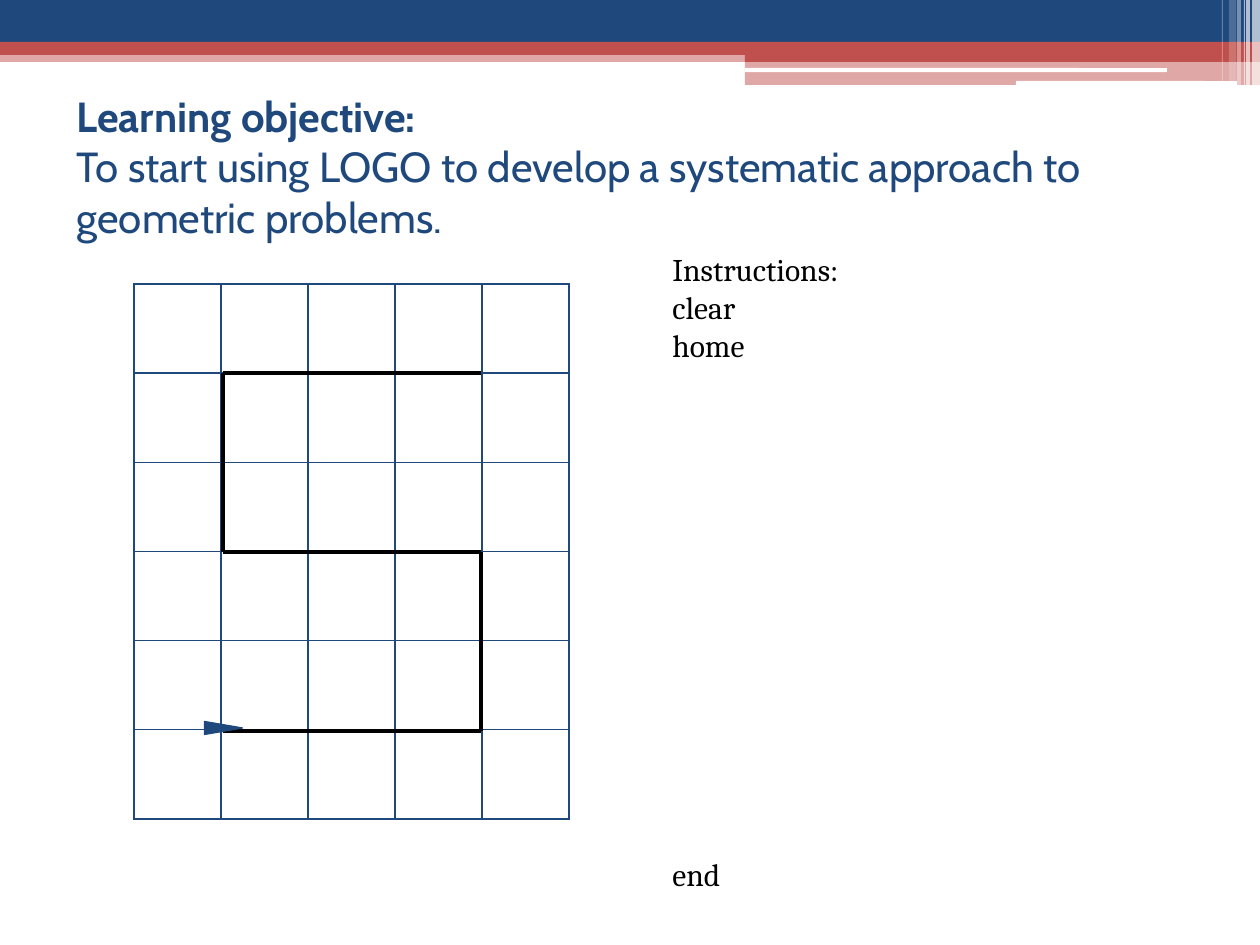
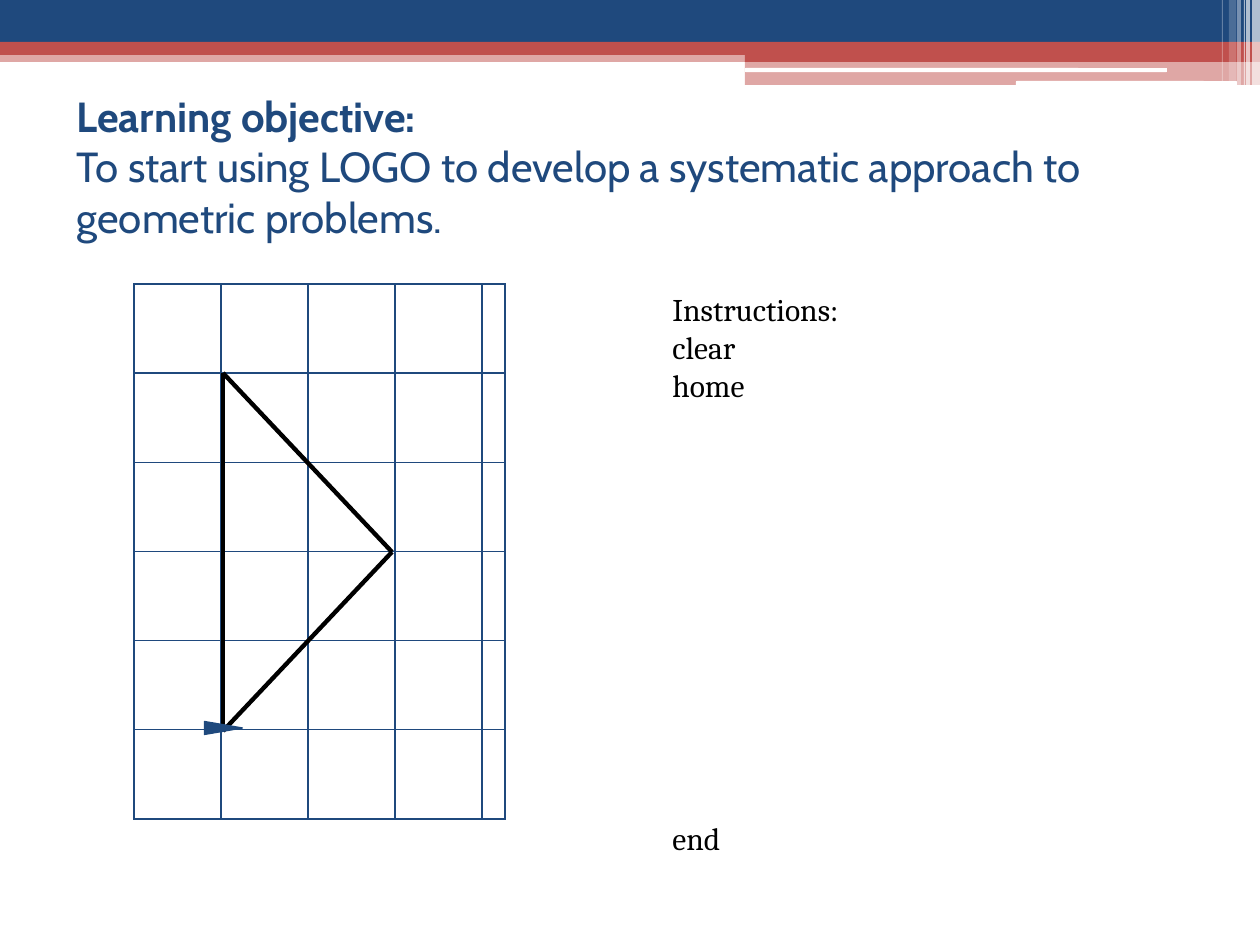
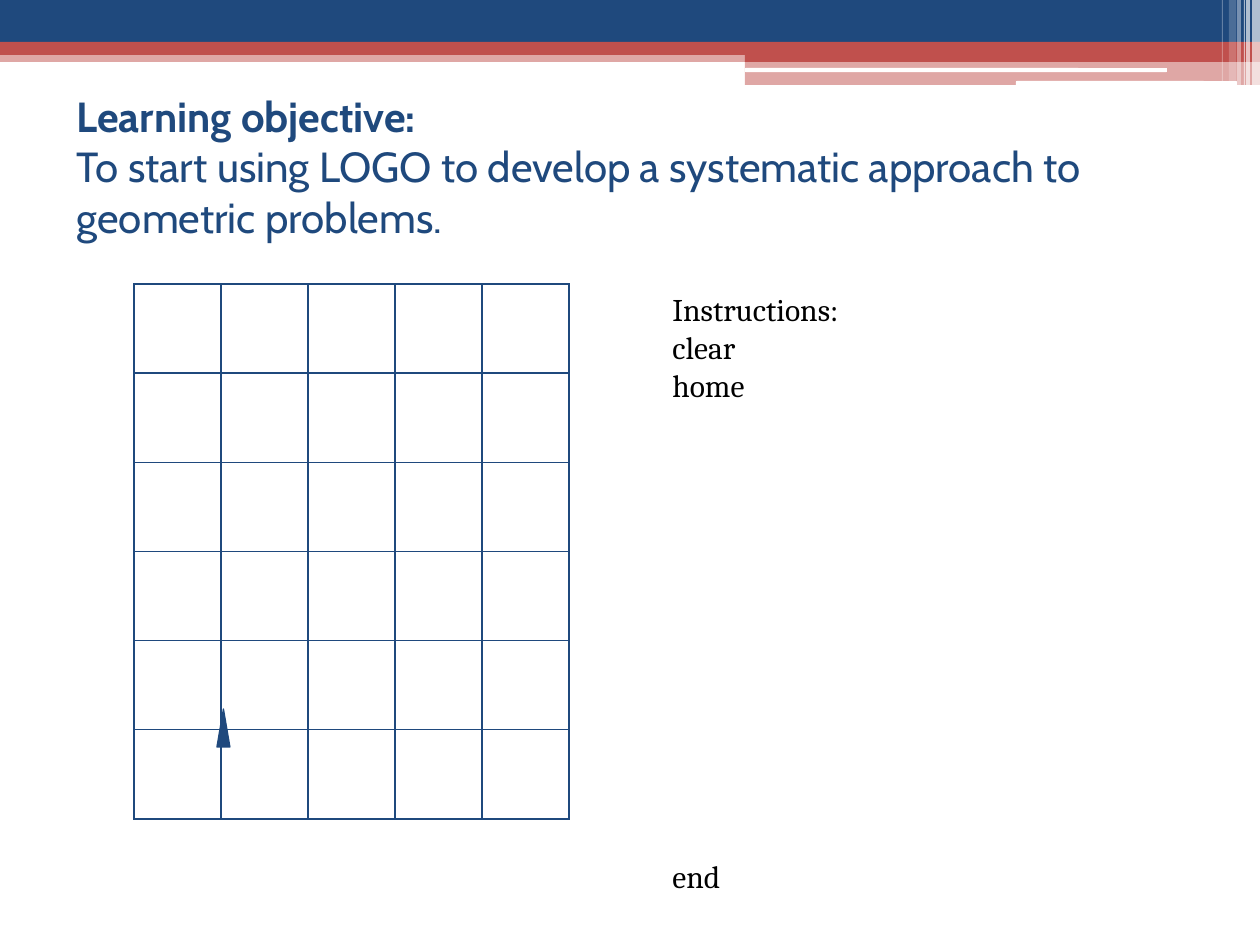
from lxml import etree
from pptx import Presentation
from pptx import util as u
from pptx.dml.color import RGBColor
from pptx.enum import shapes, text
from pptx.oxml.ns import qn

EMU_PER_PX = 914400 / 126
NAVY, RED, WHITE, BLACK = "1F497D", "C0504D", "FFFFFF", "000000"
TITLE_FONT, BODY_FONT = "Cabin", "Cambria"
TITLE_SIZE, BODY_SIZE = 24, 18
RECT = shapes.MSO_SHAPE.RECTANGLE
ROUNDED = shapes.MSO_SHAPE.ROUNDED_RECTANGLE

# kind, left, top, width, height, colour, opacity in percent
BANDS = [
    (RECT, 0, 50, 1260, 12, RED, 50),
    (RECT, 0, 0, 1260, 42, NAVY, 100),
    (RECT, 0, 42, 1260, 13, RED, 100),
    (RECT, 745, 49, 515, 13, RED, 100),
    (RECT, 745, 61, 515, 24, RED, 50),
    (ROUNDED, 745, 68, 422, 4, WHITE, 100),
    (ROUNDED, 1016, 81, 221, 5, WHITE, 100),
    (RECT, 1252, 0, 8, 85, WHITE, 65),
    (RECT, 1246, 0, 4, 85, WHITE, 65),
    (RECT, 1244, 0, 1, 85, WHITE, 60),
    (RECT, 1237, 0, 4, 85, WHITE, 40),
    (RECT, 1229, 0, 7, 81, WHITE, 20),
    (RECT, 1222, 0, 1, 81, WHITE, 30),
]

# Corners of the figures drawn on the grid
LEFT, TIP, RIGHT = 223, 392, 481
TOP, MIDDLE, BOTTOM = 373, 552, 731
S_STROKES = [
    (RIGHT, TOP, LEFT, TOP),
    (RIGHT, BOTTOM, LEFT, BOTTOM),
    (RIGHT, MIDDLE, LEFT, MIDDLE),
    (LEFT, MIDDLE, LEFT, TOP),
    (RIGHT, BOTTOM, RIGHT, MIDDLE),
]
TRIANGLE_STROKES = [
    (TIP, MIDDLE, LEFT, TOP),
    (TIP, MIDDLE, LEFT, BOTTOM),
    (LEFT, 728, LEFT, TOP),
]


def px(*lengths):
    return [u.Emu(round(length * EMU_PER_PX)) for length in lengths]


def colour(value):
    return RGBColor.from_string(value)


def style_span(span, font, size, value, bold=False):
    span.font.name = font
    span.font.size = u.Pt(size)
    span.font.color.rgb = colour(value)
    span.font.bold = bold


def add_filled(page, kind, left, top, width, height, fill, opacity=100):
    shape = page.shapes.add_shape(kind, *px(left, top, width, height))
    shape.shadow.inherit = False
    shape.fill.solid()
    shape.fill.fore_color.rgb = colour(fill)
    shape.line.fill.background()
    if opacity < 100:
        tint = next(shape.element.iter(qn("a:srgbClr")))
        etree.SubElement(tint, qn("a:alpha"), val=str(opacity * 1000))
    return shape


def add_bands(layout, page):
    """Draw the bands on the page, then move them to the layout all pages share."""
    for placeholder in list(layout.placeholders):
        if placeholder.placeholder_format.type != shapes.PP_PLACEHOLDER.TITLE:
            layout.shapes.element.remove(placeholder.element)
    for band in BANDS:
        layout.shapes.element.append(add_filled(page, *band).element)


def add_title(page, heading, objective):
    title = page.shapes.title
    title.left, title.top, title.width, title.height = px(64, 98, 1124, 136)
    frame = title.text_frame
    frame.text = f"{heading}\v{objective}"
    frame.auto_size = text.MSO_AUTO_SIZE.NONE
    frame.vertical_anchor = text.MSO_ANCHOR.MIDDLE
    para = frame.paragraphs[0]
    para.alignment = text.PP_ALIGN.LEFT
    for span in para.runs:
        style_span(span, TITLE_FONT, TITLE_SIZE, NAVY, span.text == heading)
    for line_break in title.element.iter(qn("a:br")):
        etree.SubElement(line_break, qn("a:rPr"), sz=str(TITLE_SIZE * 100))


def add_grid(page, last_column=87):
    widths = [87] * 4 + [last_column]
    frame = page.shapes.add_table(6, 5, *px(134, 284, sum(widths), 535))
    table = frame.table
    table.first_row = table.horz_banding = False
    for column, width in zip(table.columns, widths):
        column.width = px(width)[0]
    for cell in table.iter_cells():
        cell.margin_left = cell.margin_right = 0
        cell.fill.background()
    for properties in frame.element.iter(qn("a:tcPr")):
        for index, side in enumerate(("a:lnL", "a:lnR", "a:lnT", "a:lnB")):
            border = etree.Element(qn(side), w=str(u.Pt(1)))
            fill = etree.SubElement(border, qn("a:solidFill"))
            etree.SubElement(fill, qn("a:srgbClr"), val=NAVY)
            properties.insert(index, border)


def add_strokes(page, strokes):
    for stroke in strokes:
        line = page.shapes.add_connector(shapes.MSO_CONNECTOR.STRAIGHT, *px(*stroke))
        line.line.color.rgb = colour(BLACK)
        line.line.width = u.Pt(2.5)
        etree.SubElement(line.element.spPr, qn("a:effectLst"))


def add_instructions(page, top, height, gap):
    """List the commands, leaving a gap before the last for pupils to fill in."""
    box = page.shapes.add_textbox(*px(660, top, 476, height))
    frame = box.text_frame
    frame.word_wrap = True
    frame.text = "Instructions:\nclear\nhome\nend"
    for para in frame.paragraphs:
        style_span(para.runs[0], BODY_FONT, BODY_SIZE, BLACK)
    frame.paragraphs[-1].space_before = px(gap)[0]


def add_turtle(page, rotation):
    kind = shapes.MSO_SHAPE.ISOSCELES_TRIANGLE
    turtle = add_filled(page, kind, 217, 709, 13, 38, NAVY)
    turtle.line.color.rgb = colour(NAVY)
    turtle.line.width = u.Pt(0.75)
    turtle.rotation = rotation


def main():
    deck = Presentation()
    deck.slide_width, deck.slide_height = px(1260, 945)
    layout = deck.slide_layouts.get_by_name("Title Only")
    # last grid column, strokes, instructions (top, height, gap), turtle rotation
    exercises = [
        (87, S_STROKES, (244, 662, 491), 90),
        (23, TRIANGLE_STROKES, (284, 585, 415), 90),
        (87, [], (284, 624, 453), 0),
    ]
    for number, (last_column, strokes, instructions, rotation) in enumerate(exercises):
        page = deck.slides.add_slide(layout)
        if number == 0:
            add_bands(layout, page)
        add_title(page, "Learning objective:",
                  "To start using LOGO to develop a systematic approach"
                  " to geometric problems.")
        add_grid(page, last_column)
        add_strokes(page, strokes)
        add_instructions(page, *instructions)
        add_turtle(page, rotation)
    deck.save("out.pptx")


if __name__ == "__main__":
    main()
